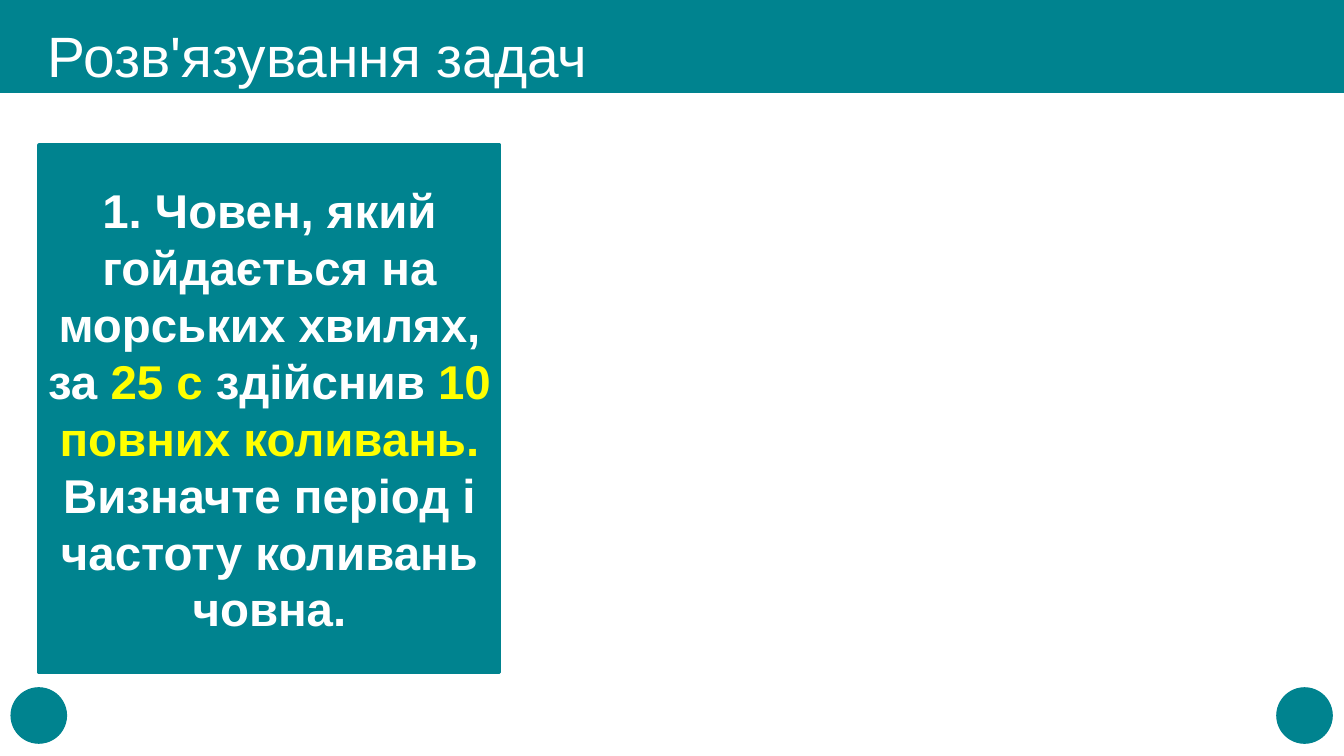
from dataclasses import dataclass

from pptx import Presentation
from pptx.dml.color import RGBColor
from pptx.enum.shapes import MSO_SHAPE as Preset
from pptx.enum.text import MSO_ANCHOR as Anchor, MSO_AUTO_SIZE as AutoSize, PP_ALIGN as Align
from pptx.util import Cm, Pt


@dataclass(frozen=True)
class Theme:
    font: str = "Arial"
    teal: str = "00838F"
    white: str = "FFFFFF"
    yellow: str = "FFFF00"
    title_size: int = 48
    task_size: int = 40


def add_span(para, text, *, font, size, color, bold=False):
    span = para.add_run()
    span.text = text
    span.font.name = font
    span.font.size = Pt(size)
    span.font.bold = bold
    span.font.color.rgb = RGBColor.from_string(color)


class SlideBuilder:
    def __init__(self, page, theme):
        self.page = page
        self.theme = theme

    def shape(self, preset, left, top, width, height, line_width=1):
        shape = self.page.shapes.add_shape(preset, Cm(left), Cm(top), Cm(width), Cm(height))
        color = RGBColor.from_string(self.theme.teal)
        shape.shadow.inherit = False
        shape.fill.solid()
        shape.fill.fore_color.rgb = color
        shape.line.color.rgb = color
        shape.line.width = Pt(line_width)
        return shape

    def text(self, box, spans, size, align, bold=False, line_spacing=1.0):
        frame = box.text_frame
        frame.word_wrap = True
        frame.auto_size = AutoSize.NONE
        frame.vertical_anchor = Anchor.MIDDLE
        para = frame.paragraphs[0]
        para.alignment = align
        para.line_spacing = line_spacing
        para.space_before = Pt(0)
        for text, color in spans:
            add_span(para, text, font=self.theme.font, size=size, color=color, bold=bold)

    def title(self, text, left, top, width, height):
        box = self.page.shapes.title
        box.left, box.top, box.width, box.height = Cm(left), Cm(top), Cm(width), Cm(height)
        self.text(box, [(text, self.theme.white)], self.theme.title_size, Align.LEFT,
                  line_spacing=0.9)
        return box


def main():
    theme = Theme()
    deck = Presentation()
    deck.slide_width, deck.slide_height = Cm(40), Cm(22.5)
    title_only = deck.slide_layouts[5]
    builder = SlideBuilder(deck.slides.add_slide(title_only), theme)

    # Header band, placed behind the title
    band = builder.shape(Preset.RECTANGLE, 0, 0, 40, 2.75)
    title = builder.title("Розв'язування задач", 1.17, 0.76, 34.5, 1.98)
    title.element.addprevious(band.element)

    # Round markers in the bottom corners
    for left, turn in ((38, 180), (0.33, 0)):
        marker = builder.shape(Preset.OVAL, left, 20.47, 1.65, 1.65)
        marker.rotation = turn

    # Task panel with the given values highlighted
    panel = builder.shape(Preset.RECTANGLE, 1.17, 4.32, 13.7, 15.7, line_width=3)
    task = [
        ("1. Човен, який гойдається на морських хвилях, за ", theme.white),
        ("25 с", theme.yellow),
        (" здійснив ", theme.white),
        ("10 повних коливань. ", theme.yellow),
        ("Визначте період і частоту коливань човна.", theme.white),
    ]
    builder.text(panel, task, theme.task_size, Align.CENTER, bold=True)

    deck.save("out.pptx")


if __name__ == "__main__":
    main()
